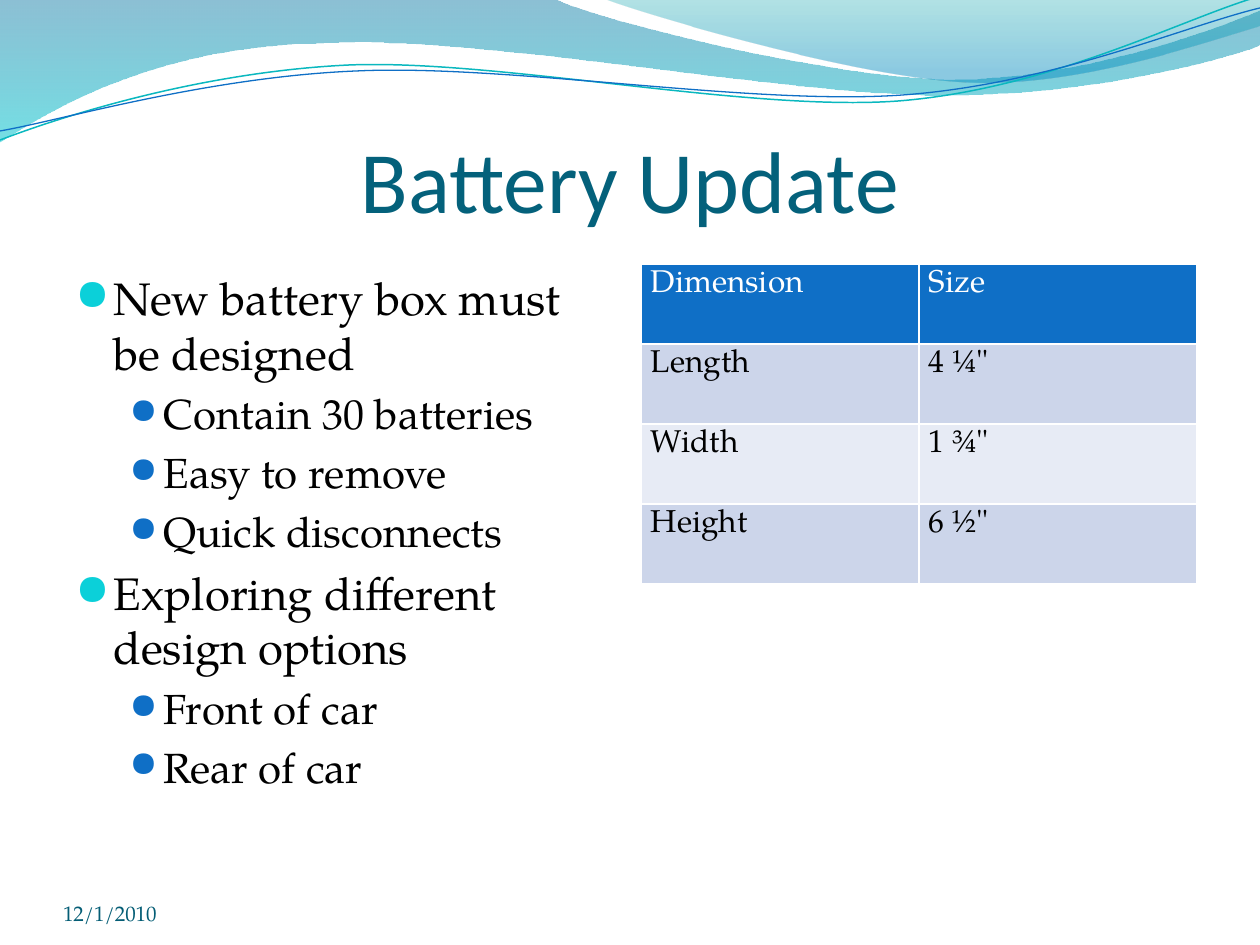
import pptx
import pptx.dml.color
import pptx.enum.text
import pptx.oxml
import pptx.oxml.ns
import pptx.util

EMU_PER_PX = 914400 / 126
BODY_FONT = "TeX Gyre Pagella"
DRAWING_NS = pptx.oxml.ns.nsdecls("a")

BACK_WAVE = [
    [(0, 0)], [(554, -1)],
    [(600, 21), (837, 79), (955, 79)], [(1075, 79), (1207, 33), (1260, 11)],
    [(1261, 45)],
    [(1239, 55), (1096, 96), (940, 95)], [(781, 95), (481, 35), (324, 43)],
    [(163, 45), (58, 105), (-1, 142)], [(0, 0)],
]
FRONT_WAVE = [
    [(604, -1)],
    [(641, 14), (859, 78), (969, 82)], [(1079, 87), (1211, 40), (1260, 26)],
    [(1260, 0)], [(604, -1)],
]
TEAL_LINE = [
    [(0, 140)],
    [(60, 117), (199, 72), (349, 65)], [(498, 59), (747, 112), (898, 101)],
    [(1050, 89), (1182, 19), (1257, -3)],
]
BLUE_LINE = [
    [(0, 131)],
    [(59, 121), (207, 77), (357, 71)], [(508, 64), (752, 106), (903, 95)],
    [(1053, 84), (1185, 26), (1260, 8)],
]
BULLETS = [
    (0, "New battery box must be designed"),
    (1, "Contain 30 batteries"),
    (1, "Easy to remove"),
    (1, "Quick disconnects"),
    (0, "Exploring different design options"),
    (1, "Front of car"),
    (1, "Rear of car"),
]
BULLET_LEVELS = [
    {"size": 26, "margin": 38, "hanging": 38, "color": "0BD0D9", "scale": 95},
    {"size": 24, "margin": 88, "hanging": 34, "color": "0F6FC6", "scale": 85},
]
DIMENSIONS = [("Dimension", "Size"), ("Length", '4 ¼"'), ("Width", '1 ¾"'), ("Height", '6 ½"')]
ROW_FILLS = ["0F6FC6", "CCD5EA", "E7EBF5", "CCD5EA"]


def px(value):
    """Turn pixels into EMU."""
    return pptx.util.Emu(round(value * EMU_PER_PX))


def rgb(value):
    """Turn a hex string into a colour."""
    return pptx.dml.color.RGBColor.from_string(value)


def set_font(paragraph, size, color, name=BODY_FONT):
    """Format all text of a paragraph."""
    font = paragraph.font
    font.name, font.size, font.bold = name, pptx.util.Pt(size), False
    font.color.rgb = rgb(color)


def set_margins(target, left, top, right, bottom):
    """Set the insets of a text frame or table cell."""
    target.margin_left, target.margin_top = px(left), px(top)
    target.margin_right, target.margin_bottom = px(right), px(bottom)


def bend(shape, segments):
    """Join each run of three straight steps into one cubic curve."""
    steps = iter(shape._element.findall(".//" + pptx.oxml.ns.qn("a:lnTo")))
    for segment in segments[1:]:
        group = [next(steps) for _ in segment]
        if len(group) == 3:
            curve = pptx.oxml.parse_xml(f"<a:cubicBezTo {DRAWING_NS}/>")
            group[0].addprevious(curve)
            for step in group:
                curve.append(step[0])
                step.getparent().remove(step)


def add_outline(slide, segments, close):
    """Add a curved freeform without shadow."""
    start, *rest = [(px(x), px(y)) for segment in segments for x, y in segment]
    builder = slide.shapes.build_freeform(*start, scale=1.0)
    builder.add_line_segments(rest, close=close)
    shape = builder.convert_to_shape()
    bend(shape, segments)
    shape.shadow.inherit = False
    return shape


def add_wave(slide, segments, stops):
    """Add a band with a see-through gradient running downwards."""
    shape = add_outline(slide, segments, True)
    shape.line.fill.background()
    shape.fill.gradient()
    shape.fill.gradient_angle = 270
    for stop, (position, color, _) in zip(shape.fill.gradient_stops, stops):
        stop.position = position
        stop.color.rgb = rgb(color)
    colors = shape._element.spPr.findall(".//" + pptx.oxml.ns.qn("a:srgbClr"))
    for element, (_, _, opacity) in zip(colors, stops):
        element.append(pptx.oxml.parse_xml(f'<a:alpha {DRAWING_NS} val="{opacity * 1000}"/>'))


def add_curve(slide, segments, color, width):
    """Add an open curved line."""
    shape = add_outline(slide, segments, False)
    shape.fill.background()
    shape.line.color.rgb = rgb(color)
    shape.line.width = pptx.util.Pt(width)


def add_title(slide, text):
    """Place and format the title placeholder."""
    title = slide.shapes.title
    title.left, title.top, title.width, title.height = px(63), px(97), px(1134), px(158)
    frame = title.text_frame
    frame.text = text
    frame.vertical_anchor = pptx.enum.text.MSO_ANCHOR.MIDDLE
    set_margins(frame, 0, 6, 0, 0)
    frame.paragraphs[0].alignment = pptx.enum.text.PP_ALIGN.CENTER
    set_font(frame.paragraphs[0], 50, "04617B", "Calibri")


def add_text_frame(slide, left, top, width, height):
    """Add a wrapping text box and return its frame."""
    frame = slide.shapes.add_textbox(px(left), px(top), px(width), px(height)).text_frame
    frame.word_wrap = True
    return frame


def set_bullet(paragraph, style):
    """Give a paragraph its hanging indent and bullet."""
    properties = paragraph._p.get_or_add_pPr()
    properties.set("marL", str(px(style["margin"])))
    properties.set("indent", str(-px(style["hanging"])))
    for xml in (
        f'<a:buClr {DRAWING_NS}><a:srgbClr val="{style["color"]}"/></a:buClr>',
        f'<a:buSzPct {DRAWING_NS} val="{style["scale"] * 1000}"/>',
        f'<a:buFont {DRAWING_NS} typeface="OpenSymbol"/>',
        f'<a:buChar {DRAWING_NS} char="●"/>',
    ):
        properties.append(pptx.oxml.parse_xml(xml))


def add_bullets(slide, items):
    """Add the two-level bullet list."""
    frame = add_text_frame(slide, 63, 264, 557, 611)
    for index, (level, text) in enumerate(items):
        paragraph = frame.add_paragraph() if index else frame.paragraphs[0]
        style = BULLET_LEVELS[level]
        paragraph.text, paragraph.level = text, level
        set_bullet(paragraph, style)
        if index:
            paragraph.space_before = pptx.util.Pt(style["size"] * 0.2)
        set_font(paragraph, style["size"], "000000")


def set_borders(cell):
    """Draw thin white borders around a cell."""
    properties = cell._tc.get_or_add_tcPr()
    for index, side in enumerate("LRTB"):
        properties.insert(index, pptx.oxml.parse_xml(
            f'<a:ln{side} {DRAWING_NS} w="12700"><a:solidFill>'
            f'<a:srgbClr val="FFFFFF"/></a:solidFill></a:ln{side}>'))


def add_dimension_table(slide, rows):
    """Add the table of battery dimensions."""
    table = slide.shapes.add_table(len(rows), 2, px(641), px(264), px(556), px(320)).table
    table.horz_banding = False
    for row_index, (row, fill) in enumerate(zip(rows, ROW_FILLS)):
        for column_index, text in enumerate(row):
            cell = table.cell(row_index, column_index)
            cell.text = text
            set_margins(cell, 10, 6, 10, 6)
            cell.fill.solid()
            cell.fill.fore_color.rgb = rgb(fill)
            set_borders(cell)
            set_font(cell.text_frame.paragraphs[0], 18, "000000" if row_index else "FFFFFF")


def add_date(slide, text):
    """Add the date at the bottom left."""
    frame = add_text_frame(slide, 63, 876, 294, 50)
    frame.text = text
    frame.vertical_anchor = pptx.enum.text.MSO_ANCHOR.BOTTOM
    set_margins(frame, 0, 0, 0, 0)
    set_font(frame.paragraphs[0], 12, "045D75")


def main():
    """Build and save the slide."""
    presentation = pptx.Presentation()
    presentation.slide_width, presentation.slide_height = px(1260), px(945)
    slide = presentation.slides.add_slide(presentation.slide_layouts[5])
    add_wave(slide, BACK_WAVE, [(0, "0074A1", 45), (1, "00C6CF", 55)])
    add_wave(slide, FRONT_WAVE, [(0, "00A1A9", 30), (0.8, "008BBF", 45)])
    add_curve(slide, TEAL_LINE, "0AB8BF", 0.85)
    add_curve(slide, BLUE_LINE, "0F6FC6", 0.75)
    add_title(slide, "Battery Update")
    add_bullets(slide, BULLETS)
    add_dimension_table(slide, DIMENSIONS)
    add_date(slide, "12/1/2010")
    presentation.save("out.pptx")


if __name__ == "__main__":
    main()
